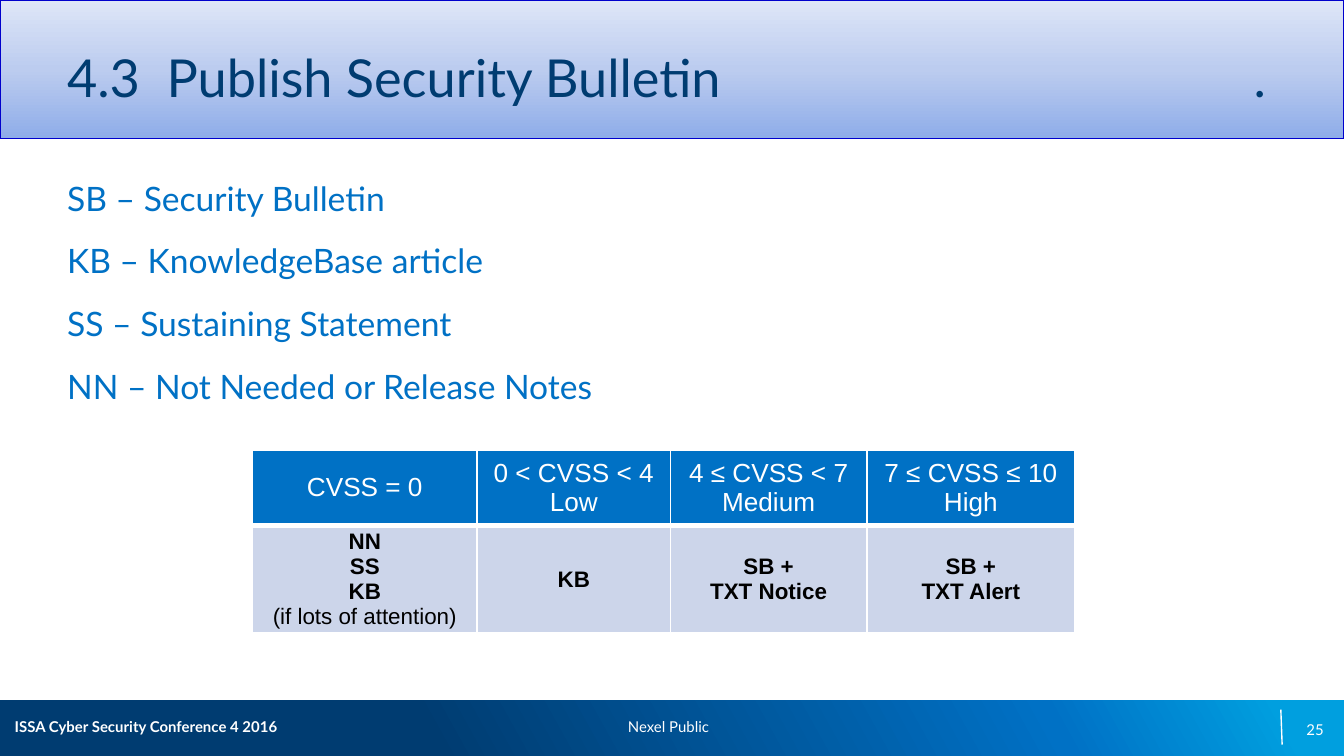
from pptx import Presentation
from pptx.dml.color import RGBColor
from pptx.enum.shapes import MSO_CONNECTOR, MSO_SHAPE
from pptx.enum.text import MSO_ANCHOR, PP_ALIGN
from pptx.oxml import parse_xml
from pptx.oxml.ns import nsdecls, qn
from pptx.util import Inches, Pt

RECT, STRAIGHT = MSO_SHAPE.RECTANGLE, MSO_CONNECTOR.STRAIGHT
TOP, MIDDLE = MSO_ANCHOR.TOP, MSO_ANCHOR.MIDDLE
LEFT, CENTER, RIGHT = PP_ALIGN.LEFT, PP_ALIGN.CENTER, PP_ALIGN.RIGHT

COLORS = {
    "navy": "003C71", "blue": "0071C5", "cyan": "009FDF", "outline": "0000CC",
    "sky_dark": "8FADE9", "sky": "BCCCEF", "sky_light": "DEE6F7",
    "row": "CCD5EA", "white": "FFFFFF", "black": "000000",
}
TITLE = "4.3\tPublish Security Bulletin\t."
TERMS = ["SB – Security Bulletin", "KB – KnowledgeBase article",
         "SS – Sustaining Statement", "NN – Not Needed or Release Notes"]
COLUMNS = [1.67, 1.44, 1.46, 1.55]
HEADER = [["CVSS = 0"], ["0 < CVSS < 4", "Low"],
          ["4 ≤ CVSS < 7", "Medium"], ["7 ≤ CVSS ≤ 10", "High"]]
ACTIONS = [["NN", "SS", "KB", "(if lots of attention)"], ["KB"],
           ["SB +", "TXT Notice"], ["SB +", "TXT Alert"]]


def rgb(name):
    """Return the named colour."""
    return RGBColor.from_string(COLORS[name])


def write(tf, lines, color, align=LEFT, gap=0, **font):
    """Fill a text frame with one formatted paragraph per line."""
    for i, line in enumerate(lines):
        p = tf.paragraphs[0] if i == 0 else tf.add_paragraph()
        p.alignment = align
        p.space_before = Pt(gap if i else 0)
        r = p.add_run()
        r.text = line
        r.font.color.rgb = rgb(color)
        for key, value in font.items():
            setattr(r.font, key, value)


def add_text(slide, box, lines, color, size, anchor=TOP, **format_values):
    """Add a text box without margins and return its text frame."""
    tf = slide.shapes.add_textbox(*map(Inches, box)).text_frame
    frame = {"word_wrap": True, "vertical_anchor": anchor, "margin_left": 0,
             "margin_top": 0, "margin_right": 0, "margin_bottom": 0}
    for key, value in frame.items():
        setattr(tf, key, value)
    write(tf, lines, color, name="Lato", size=Pt(size), **format_values)
    return tf


def add_band(slide, box, stops, angle):
    """Add a full-width rectangle with a linear gradient."""
    sp = slide.shapes.add_shape(RECT, *map(Inches, box))
    sp.shadow.inherit = False
    sp.line.fill.background()
    sp.fill.gradient()
    grad = sp._element.spPr.find(qn("a:gradFill"))
    gs = "".join(f'<a:gs pos="{pos * 1000}"><a:srgbClr val="{COLORS[c]}"/></a:gs>'
                 for pos, c in stops)
    grad.getparent().replace(grad, parse_xml(
        f'<a:gradFill {nsdecls("a")} rotWithShape="1"><a:gsLst>{gs}</a:gsLst>'
        f'<a:lin ang="{angle * 60000}" scaled="0"/></a:gradFill>'))
    return sp


def add_header(slide, box):
    """Draw the title band and its tabbed title."""
    x, y, w, h = box
    sp = add_band(slide, box, [(0, "sky_dark"), (50, "sky"), (100, "sky_light")], 270)
    sp.line.color.rgb = rgb("outline")
    sp.line.width = Pt(0.75)
    tf = add_text(slide, (x + 0.5, y + 0.34, w - 1, 0.95), [TITLE], "navy", 28)
    tabs = "".join(f'<a:tab pos="{Inches(pos)}" algn="{align}"/>'
                   for pos, align in [(0.74, "l"), (8.92, "r")])
    tf.paragraphs[0]._p.get_or_add_pPr().append(
        parse_xml(f'<a:tabLst {nsdecls("a")}>{tabs}</a:tabLst>'))


def add_footer(slide, box):
    """Draw the footer band, its divider and its three labels."""
    x, y, w, h = box
    add_band(slide, box, [(32, "navy"), (78, "blue"), (95, "cyan")], 331)
    ends = (x + 9.53, y + 0.07, x + 9.54, y + 0.33)
    divider = slide.shapes.add_connector(STRAIGHT, *map(Inches, ends))
    divider.line.color.rgb = rgb("white")
    divider.line.width = Pt(0.75)
    divider._element.spPr.append(parse_xml(f'<a:effectLst {nsdecls("a")}/>'))
    labels = [(0.11, 0.05, "ISSA Cyber Security Conference 4 2016", LEFT, True),
              (3.81, 0.05, "Nexel Public", CENTER, False),
              (7.52, 0.07, "25", RIGHT, False)]
    for dx, dy, label, align, bold in labels:
        add_text(slide, (x + dx, y + dy, 2.33, 0.3), [label], "white", 8,
                 MIDDLE, align=align, bold=bold)


def set_borders(cell, bottom):
    """Give a cell white borders with the given bottom width."""
    tc_pr = cell._tc.get_or_add_tcPr()
    for i, (side, width) in enumerate([("L", 1), ("R", 1), ("T", 1), ("B", bottom)]):
        tc_pr.insert(i, parse_xml(
            f'<a:ln{side} {nsdecls("a")} w="{Pt(width)}"><a:solidFill>'
            f'<a:srgbClr val="{COLORS["white"]}"/></a:solidFill></a:ln{side}>'))


def add_score_table(slide, box):
    """Draw the table of actions by CVSS score."""
    frame = slide.shapes.add_table(2, len(COLUMNS), *map(Inches, box))
    table = frame.table
    table.first_row = table.horz_banding = False
    for column, width in zip(table.columns, COLUMNS):
        column.width = Inches(width)
    rows = [(HEADER, 0.56, "blue", "white", 14, False, 3),
            (ACTIONS, 0.65, "row", "black", 12, True, 1)]
    margins = {"margin_left": Inches(0.06), "margin_right": Inches(0.06),
               "margin_top": 0, "margin_bottom": 0, "vertical_anchor": MIDDLE}
    for i, (texts, height, fill, color, size, bold, bottom) in enumerate(rows):
        table.rows[i].height = Inches(height)
        for j, lines in enumerate(texts):
            cell = table.cell(i, j)
            for key, value in margins.items():
                setattr(cell, key, value)
            cell.fill.solid()
            cell.fill.fore_color.rgb = rgb(fill)
            set_borders(cell, bottom)
            write(cell.text_frame, lines, color, CENTER,
                  name="Arial", size=Pt(size), bold=bold)
    note = table.cell(1, 0).text_frame.paragraphs[-1]
    note.runs[0].font.bold = False
    frame.height = Inches(box[3])


def main():
    """Build and save the slide."""
    prs = Presentation()
    prs.slide_width = Inches(10)
    prs.slide_height = prs.slide_width * 9 // 16
    slide = prs.slides.add_slide(prs.slide_layouts[6])
    add_header(slide, (0, 0, 10, 1.03))
    add_footer(slide, (0, 5.21, 10, 0.42))
    add_text(slide, (0.5, 1.32, 4.18, 3.75), TERMS, "blue", 18, gap=12)
    add_score_table(slide, (1.88, 3.35, sum(COLUMNS), 1.36))
    prs.save("out.pptx")


if __name__ == "__main__":
    main()
